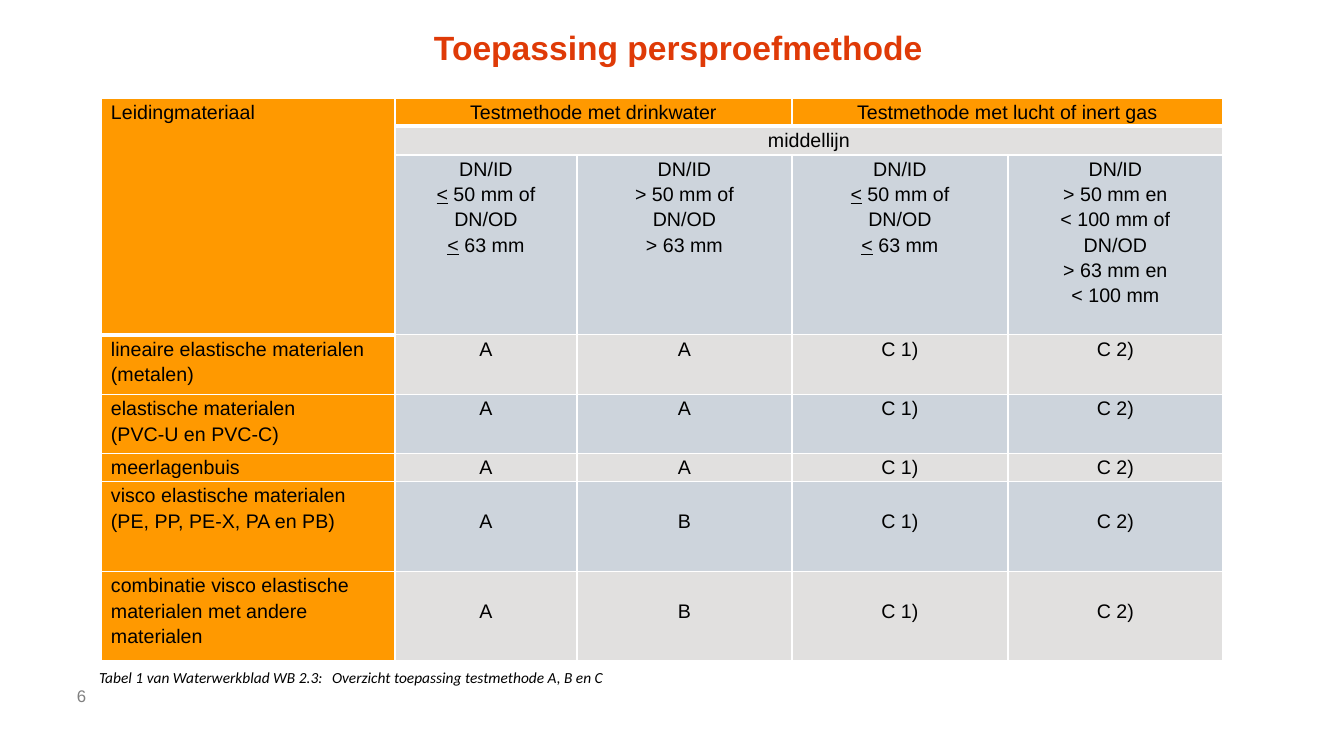
from lxml.etree import SubElement
from pptx import Presentation
from pptx.dml.color import RGBColor
from pptx.enum.text import MSO_ANCHOR, PP_ALIGN
from pptx.oxml.ns import qn
from pptx.util import Pt

PX = 914400 / 100.8
COLORS = {"orange": "FF9900", "grey": "E1E0DF", "blue": "CDD4DC", "white": "FFFFFF",
          "black": "000000", "red": "DF3A07", "number": "808080"}
SIDES = ("a:lnL", "a:lnR", "a:lnT", "a:lnB")
LINE_HEIGHT = 26


def px(length):
    return round(length * PX)


def format_font(font, color, **values):
    font.color.rgb = RGBColor.from_string(COLORS[color])
    for name, value in values.items():
        setattr(font, name, value)


presentation = Presentation()
presentation.slide_width, presentation.slide_height = px(1344), px(756)
slide = presentation.slides.add_slide(presentation.slide_layouts[6])

# Table: lines within a cell are separated by "\n"; a leading "_" underlines the sign after it
small = "DN/ID\n_< 50 mm of\nDN/OD\n_< 63 mm"
large = "DN/ID\n> 50 mm of\nDN/OD\n> 63 mm"
large_gas = "DN/ID\n> 50 mm en\n< 100 mm of\nDN/OD\n> 63 mm en\n< 100 mm"
materials = [
    ("lineaire elastische materialen (metalen)", "A"),
    ("elastische materialen\n(PVC-U en PVC-C)", "A"),
    ("meerlagenbuis", "A"),
    ("visco elastische materialen\n(PE, PP, PE-X, PA en PB)", "B"),
    ("combinatie visco elastische materialen met andere materialen", "B"),
]
rows = [
    ("Leidingmateriaal", "Testmethode met drinkwater", "", "Testmethode met lucht of inert gas", ""),
    ("", "middellijn", "", "", ""),
    ("", small, large, small, large_gas),
] + [(material, "A", method, "C 1)", "C 2)") for material, method in materials]
column_widths = [294, 182, 215, 216, 215]
row_heights = [28, 29, 180, 60, 59, 28, 90, 89]

table = slide.shapes.add_table(len(rows), len(column_widths), px(101), px(98),
                               px(sum(column_widths)), px(sum(row_heights))).table
table.first_row = table.horz_banding = False
for column, width in zip(table.columns, column_widths):
    column.width = px(width)
for row, height in zip(table.rows, row_heights):
    row.height = px(height)
for top, left, bottom, right in [(0, 0, 2, 0), (0, 1, 0, 2), (0, 3, 0, 4), (1, 1, 1, 4)]:
    table.cell(top, left).merge(table.cell(bottom, right))

for row_index, texts in enumerate(rows):
    for column_index, text in enumerate(texts):
        cell = table.cell(row_index, column_index)
        cell.margin_left = cell.margin_right = px(10)
        cell.margin_bottom = 0
        # The methods of the last two materials stand one line lower
        cell.margin_top = px(LINE_HEIGHT) if row_index >= 6 and column_index else 0
        for side in SIDES:
            thick = row_index == 0 and side == "a:lnB"
            border = SubElement(cell._tc.get_or_add_tcPr(), qn(side), w=str(Pt(3 if thick else 1)))
            SubElement(SubElement(border, qn("a:solidFill")), qn("a:srgbClr"), val=COLORS["white"])
        banding = "blue" if row_index % 2 == 0 else "grey"
        fill = "orange" if row_index == 0 or column_index == 0 else banding
        cell.fill.solid()
        cell.fill.fore_color.rgb = RGBColor.from_string(COLORS[fill])
        if cell.is_spanned:
            continue
        for line_index, line in enumerate(text.split("\n")):
            text_frame = cell.text_frame
            paragraph = text_frame.add_paragraph() if line_index else text_frame.paragraphs[0]
            paragraph.line_spacing = 1.15
            paragraph.alignment = PP_ALIGN.CENTER if column_index else PP_ALIGN.LEFT
            underlined = line.startswith("_")
            for part in (line[1], line[2:]) if underlined else (line,):
                run = paragraph.add_run()
                run.text = part
                format_font(run.font, "black", name="Arial", size=Pt(14), bold=False,
                            underline=underlined and part == "<")

# Caption, title and slide number
labels = [
    ("Tabel 1 van Waterwerkblad WB 2.3:\tOverzicht toepassing testmethode A, B en C",
     (89, 663, 720, 29), 10, MSO_ANCHOR.MIDDLE, "black",
     {"name": "Calibri", "size": Pt(11), "italic": True}),
    ("Toepassing persproefmethode", (424, 22, 672, 50), 10, MSO_ANCHOR.TOP, "red",
     {"name": "Arial", "size": Pt(24), "bold": True}),
    ("6", (77, 676, 72, 40), 0, MSO_ANCHOR.MIDDLE, "number", {"name": "Arial", "size": Pt(12)}),
]
for text, bounds, inset, anchor, color, font_values in labels:
    text_frame = slide.shapes.add_textbox(*map(px, bounds)).text_frame
    text_frame.word_wrap = True
    text_frame.vertical_anchor = anchor
    text_frame.margin_left = text_frame.margin_right = px(inset)
    text_frame.margin_top = text_frame.margin_bottom = px(inset / 2)
    paragraph = text_frame.paragraphs[0]
    if "\t" in text:
        tabs = SubElement(paragraph._p.get_or_add_pPr(), qn("a:tabLst"))
        SubElement(tabs, qn("a:tab"), pos=str(px(233)), algn="l")
    run = paragraph.add_run()
    run.text = text
    format_font(run.font, color, **font_values)

presentation.save("out.pptx")
